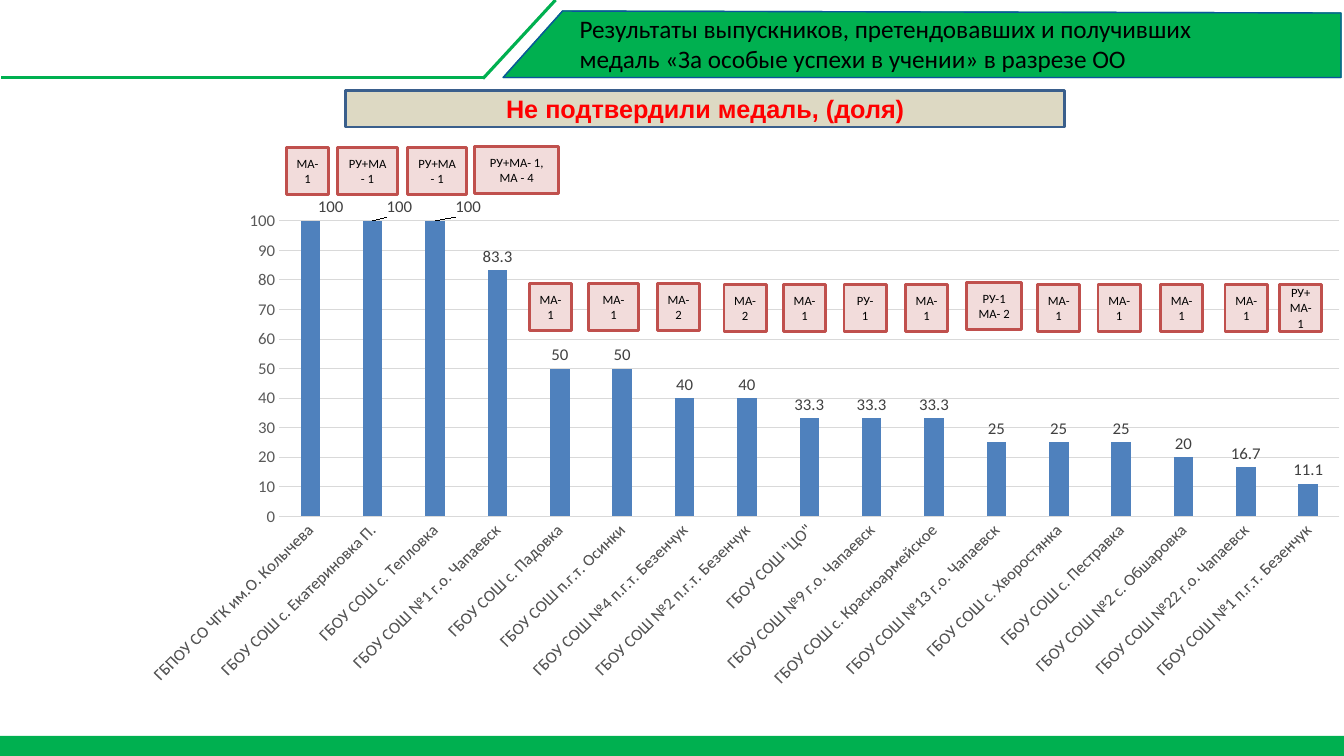
from dataclasses import dataclass

from lxml import etree
from pptx import Presentation
from pptx import util as u
from pptx.chart.data import CategoryChartData
from pptx.dml.color import RGBColor
from pptx.enum import chart as ch
from pptx.enum import shapes, text
from pptx.oxml import parse_xml
from pptx.oxml.ns import nsdecls, qn


@dataclass
class Theme:
    green: str = "00B050"
    navy: str = "0C549E"
    sand: str = "DDD9C3"
    edge: str = "3A5F8C"
    red: str = "FF0000"
    pink: str = "F2DCDB"
    brick: str = "C0504D"
    bar: str = "4F81BD"
    grid: str = "D9D9D9"
    axis: str = "595959"
    label: str = "404040"
    black: str = "000000"
    body: str = "Calibri"
    head: str = "Arial"
    big: float = 18
    mid: float = 12
    base: float = 10
    small: float = 9


class Deck:
    def __init__(self, theme, slide):
        self.theme = theme
        self.slide = slide
        self.shapes = slide.shapes

    def font(self, font, size, color, name=None, bold=False):
        font.size = u.Pt(size)
        font.name = name or self.theme.body
        font.bold = bold
        font.color.rgb = RGBColor.from_string(color)

    def paint(self, shape, fill=None, line=None, width=1):
        shape.shadow.inherit = False
        if fill:
            shape.fill.solid()
            shape.fill.fore_color.rgb = RGBColor.from_string(fill)
        else:
            shape.fill.background()
        if line:
            self.stroke(shape.line, line, width)
        else:
            shape.line.fill.background()

    def stroke(self, line, color, width):
        line.color.rgb = RGBColor.from_string(color)
        line.width = u.Pt(width)

    def rect(self, box, fill, line=None, width=2):
        shape = self.shapes.add_shape(shapes.MSO_SHAPE.RECTANGLE, *map(u.Inches, box))
        self.paint(shape, fill, line, width)
        return shape

    def card(self, box, words, fill, line, size, color, name=None, bold=False):
        frame = self.rect(box, fill, line).text_frame
        frame.word_wrap = True
        frame.vertical_anchor = text.MSO_ANCHOR.MIDDLE
        para = frame.paragraphs[0]
        para.text = words
        para.alignment = text.PP_ALIGN.CENTER
        self.font(para.font, size, color, name, bold)

    def label(self, box, words, size, color):
        frame = self.shapes.add_textbox(*map(u.Inches, box)).text_frame
        frame.word_wrap = True
        para = frame.paragraphs[0]
        para.text = words
        self.font(para.font, size, color)

    def poly(self, points, fill, line):
        spots = [(u.Inches(x), u.Inches(y)) for x, y in points]
        pen = self.shapes.build_freeform(*spots[0])
        pen.add_line_segments(spots[1:], close=True)
        self.paint(pen.convert_to_shape(), fill, line)

    def line(self, ends, color, width):
        link = self.shapes.add_connector(shapes.MSO_CONNECTOR.STRAIGHT, *map(u.Inches, ends))
        self.stroke(link.line, color, width)
        etree.SubElement(link._element.spPr, qn("a:effectLst"))

    def chart(self, box, rows, plot, shifts):
        t = self.theme
        data = CategoryChartData()
        data.categories = [name for name, _ in rows]
        data.add_series("Series 1", [value for _, value in rows])
        kind = ch.XL_CHART_TYPE.COLUMN_CLUSTERED
        chart = self.shapes.add_chart(kind, *map(u.Inches, box), data).chart
        chart.has_legend = chart.has_title = False
        self.font(chart.font, t.base, t.black)

        bars = chart.plots[0]
        bars.vary_by_categories = False
        bars.gap_width, bars.overlap = 219, -27
        series = bars.series[0]
        series.format.fill.solid()
        series.format.fill.fore_color.rgb = RGBColor.from_string(t.bar)
        tags = series.data_labels
        tags.show_value = True
        tags.position = ch.XL_LABEL_POSITION.OUTSIDE_END
        self.font(tags.font, t.mid, t.label)
        for spot, (idx, x) in enumerate(shifts):
            tags._element.insert(spot, self.shift(idx, x))

        for axis in (chart.category_axis, chart.value_axis):
            axis.major_tick_mark = axis.minor_tick_mark = ch.XL_TICK_MARK.NONE
            self.font(axis.tick_labels.font, t.mid, t.axis)
        self.stroke(chart.category_axis.format.line, t.grid, 0.75)
        names = chart.category_axis._element.find(qn("c:txPr"))
        names.find(qn("a:bodyPr")).set("rot", "-2700000")
        scale = chart.value_axis
        scale.minimum_scale, scale.maximum_scale, scale.major_unit = 0, 100, 10
        scale.format.line.fill.background()
        self.stroke(scale.major_gridlines.format.line, t.grid, 0.75)

        area = chart._chartSpace.chart.plotArea
        for old in area.findall(qn("c:layout")):
            area.remove(old)
        sizes = "".join(f'<c:{k} val="{v}"/>' for k, v in zip("xywh", plot))
        area.insert(0, parse_xml(
            f'<c:layout {nsdecls("c")}><c:manualLayout><c:layoutTarget val="inner"/>'
            f'<c:xMode val="edge"/><c:yMode val="edge"/>{sizes}'
            '</c:manualLayout></c:layout>'))

    def shift(self, idx, x):
        flags = "".join(
            f'<c:show{k} val="{int(k == "Val")}"/>'
            for k in ("LegendKey", "Val", "CatName", "SerName", "Percent", "BubbleSize"))
        return parse_xml(
            f'<c:dLbl {nsdecls("c")}><c:idx val="{idx}"/><c:layout><c:manualLayout>'
            f'<c:x val="{x}"/><c:y val="0"/></c:manualLayout></c:layout>'
            f'<c:dLblPos val="outEnd"/>{flags}</c:dLbl>')


ROWS = [
    ("ГБПОУ СО ЧГК им.О. Колычева", 100),
    ("ГБОУ СОШ с. Екатериновка П.", 100),
    ("ГБОУ СОШ с. Тепловка", 100),
    ("ГБОУ СОШ №1 г.о. Чапаевск", 83.3),
    ("ГБОУ СОШ с. Падовка", 50),
    ("ГБОУ СОШ п.г.т. Осинки", 50),
    ("ГБОУ СОШ №4 п.г.т. Безенчук", 40),
    ("ГБОУ СОШ №2 п.г.т. Безенчук", 40),
    ('ГБОУ СОШ "ЦО"', 33.3),
    ("ГБОУ СОШ №9 г.о. Чапаевск", 33.3),
    ("ГБОУ СОШ с. Красноармейское", 33.3),
    ("ГБОУ СОШ №13 г.о. Чапаевск", 25),
    ("ГБОУ СОШ с. Хворостянка", 25),
    ("ГБОУ СОШ с. Пестравка", 25),
    ("ГБОУ СОШ №2 с. Обшаровка", 20),
    ("ГБОУ СОШ №22 г.о. Чапаевск", 16.7),
    ("ГБОУ СОШ №1 п.г.т. Безенчук", 11.1),
]

CARDS = [
    (2.84, 1.46, 0.42, "МА- 1"),
    (3.35, 1.46, 0.59, "РУ+МА- 1"),
    (4.04, 1.46, 0.59, "РУ+МА- 1"),
    (4.71, 1.45, 0.83, "РУ+МА- 1, МА - 4"),
    (5.25, 2.81, 0.42, "МА- 1"),
    (5.84, 2.81, 0.49, "МА- 1"),
    (6.52, 2.81, 0.42, "МА- 2"),
    (7.18, 2.82, 0.42, "МА- 2"),
    (7.77, 2.82, 0.42, "МА- 1"),
    (8.37, 2.82, 0.42, "РУ- 1"),
    (8.98, 2.82, 0.42, "МА- 1"),
    (9.59, 2.8, 0.54, "РУ-1 МА- 2"),
    (10.29, 2.82, 0.42, "МА- 1"),
    (10.89, 2.82, 0.42, "МА- 1"),
    (11.51, 2.82, 0.42, "МА- 1"),
    (12.15, 2.82, 0.42, "МА- 1"),
    (12.69, 2.82, 0.42, "РУ+МА- 1"),
]


def main():
    show = Presentation()
    show.slide_width, show.slide_height = u.Inches(13.33), u.Inches(7.5)
    t = Theme()
    deck = Deck(t, show.slides.add_slide(show.slide_layouts[6]))

    banner = [(5.58, 0.11), (13.3, 0.13), (13.3, 0.77), (4.99, 0.77)]
    deck.poly(banner, t.green, t.green)
    deck.poly(banner, None, t.navy)
    deck.rect((0, 7.3, 13.33, 0.2), t.green)
    deck.line((5.51, 0, 4.79, 0.78), t.green, 2.25)
    deck.line((4.8, 0.77, 0.01, 0.77), t.green, 2.25)
    deck.card((3.43, 0.9, 7.13, 0.36), "Не подтвердили медаль, (доля)",
              t.sand, t.edge, t.big, t.red, t.head, True)
    deck.chart((0.63, 1.96, 12.66, 5.11), ROWS, (0.169, 0.02, 0.831, 0.589),
               [(0, 0.016), (1, 0.021), (2, 0.026)])
    for x, y, wide, words in CARDS:
        deck.card((x, y, wide, 0.47), words, t.pink, t.brick, t.small, t.black)
    deck.label((5.65, 0.08, 6.67, 0.71),
               "Результаты выпускников, претендовавших и получивших "
               "медаль «За особые успехи в учении» в разрезе ОО", t.big, t.black)
    show.save("out.pptx")


if __name__ == "__main__":
    main()
